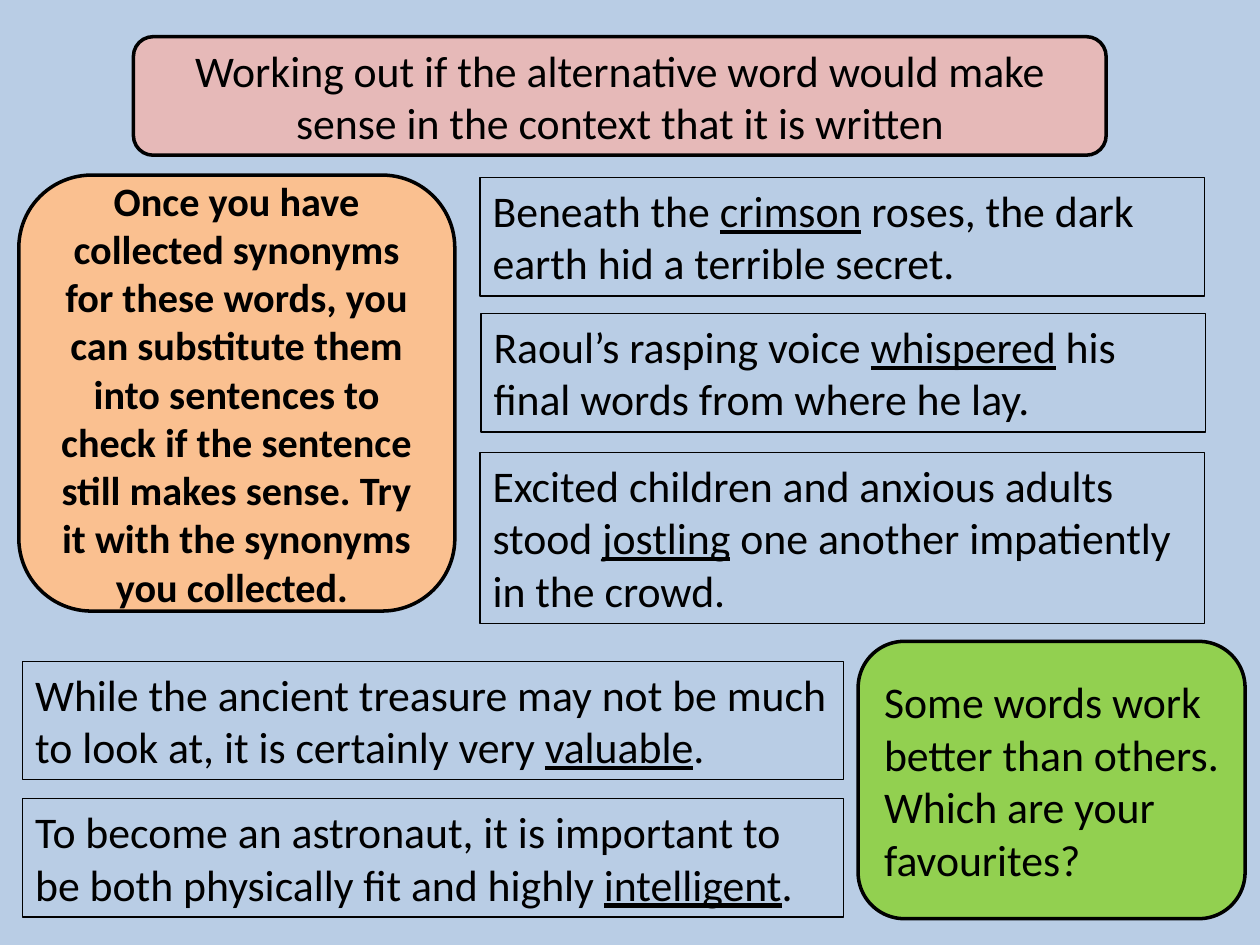
from dataclasses import dataclass

from pptx import Presentation
from pptx.dml.color import RGBColor
from pptx.enum.shapes import MSO_SHAPE
from pptx.enum.text import MSO_ANCHOR, MSO_AUTO_SIZE, PP_ALIGN
from pptx.slide import Slide
from pptx.text.text import TextFrame
from pptx.util import Cm, Pt

BLACK = "000000"


@dataclass
class Panel:
    left: float
    top: float
    width: float
    height: float
    fill: str
    text: str
    size: float = 25
    bold: bool = False
    align: PP_ALIGN = PP_ALIGN.CENTER


@dataclass
class Sentence:
    left: float
    top: float
    width: float
    height: float
    before: str
    word: str
    after: str


PANELS = [
    Panel(2.69, 0.74, 19.61, 2.39, "E6B9B8",
          "Working out if the alternative word would make sense in the context that it is written"),
    Panel(0.38, 3.53, 8.79, 8.79, "FAC090",
          "Once you have collected synonyms for these words, you can substitute them into "
          "sentences to check if the sentence still makes sense. Try it with the synonyms "
          "you collected. ", size=23, bold=True),
    Panel(17.3, 12.93, 7.8, 5.59, "92D050",
          "Some words work better than others. Which are your favourites?",
          align=PP_ALIGN.LEFT),
]

SENTENCES = [
    Sentence(9.68, 3.58, 14.6, 2.39,
             "Beneath the ", "crimson", " roses, the dark earth hid a terrible secret."),
    Sentence(9.7, 6.32, 14.6, 2.39,
             "Raoul’s rasping voice ", "whispered", " his final words from where he lay."),
    Sentence(9.68, 9.12, 14.6, 3.45,
             "Excited children and anxious adults stood ", "jostling",
             " one another impatiently in the crowd."),
    Sentence(0.46, 13.33, 16.54, 2.39,
             "While the ancient treasure may not be much to look at, it is certainly very ",
             "valuable", "."),
    Sentence(0.46, 16.1, 16.54, 2.39,
             "To become an astronaut, it is important to be both physically fit and highly ",
             "intelligent", "."),
]


def colour(value: str) -> RGBColor:
    return RGBColor.from_string(value)


def add_text(frame: TextFrame, text: str, *, size: float = 25, bold: bool = False,
             underline: bool = False, align: PP_ALIGN = PP_ALIGN.LEFT) -> None:
    para = frame.paragraphs[0]
    para.alignment = align
    span = para.add_run()
    span.text = text
    span.font.name = "Calibri"
    span.font.size = Pt(size)
    span.font.bold = bold
    span.font.underline = underline
    span.font.color.rgb = colour(BLACK)


def draw_panel(page: Slide, panel: Panel) -> None:
    box = page.shapes.add_shape(MSO_SHAPE.ROUNDED_RECTANGLE, Cm(panel.left), Cm(panel.top),
                                Cm(panel.width), Cm(panel.height))
    box.shadow.inherit = False
    box.fill.solid()
    box.fill.fore_color.rgb = colour(panel.fill)
    box.line.color.rgb = colour(BLACK)
    box.line.width = Pt(2)
    box.text_frame.word_wrap = True
    box.text_frame.vertical_anchor = MSO_ANCHOR.MIDDLE
    add_text(box.text_frame, panel.text, size=panel.size, bold=panel.bold, align=panel.align)


def draw_sentence(page: Slide, sentence: Sentence) -> None:
    box = page.shapes.add_textbox(Cm(sentence.left), Cm(sentence.top),
                                  Cm(sentence.width), Cm(sentence.height))
    box.line.color.rgb = colour(BLACK)
    box.line.width = Pt(0.75)
    frame = box.text_frame
    frame.word_wrap = True
    frame.auto_size = MSO_AUTO_SIZE.SHAPE_TO_FIT_TEXT
    add_text(frame, sentence.before)
    add_text(frame, sentence.word, underline=True)
    add_text(frame, sentence.after)


def main() -> None:
    deck = Presentation()
    deck.slide_width = Cm(25.4)
    deck.slide_height = Cm(19.05)
    page = deck.slides.add_slide(deck.slide_layouts[6])
    page.background.fill.solid()
    page.background.fill.fore_color.rgb = colour("B9CDE5")
    for panel in PANELS:
        draw_panel(page, panel)
    for sentence in SENTENCES:
        draw_sentence(page, sentence)
    deck.save("out.pptx")


if __name__ == "__main__":
    main()
